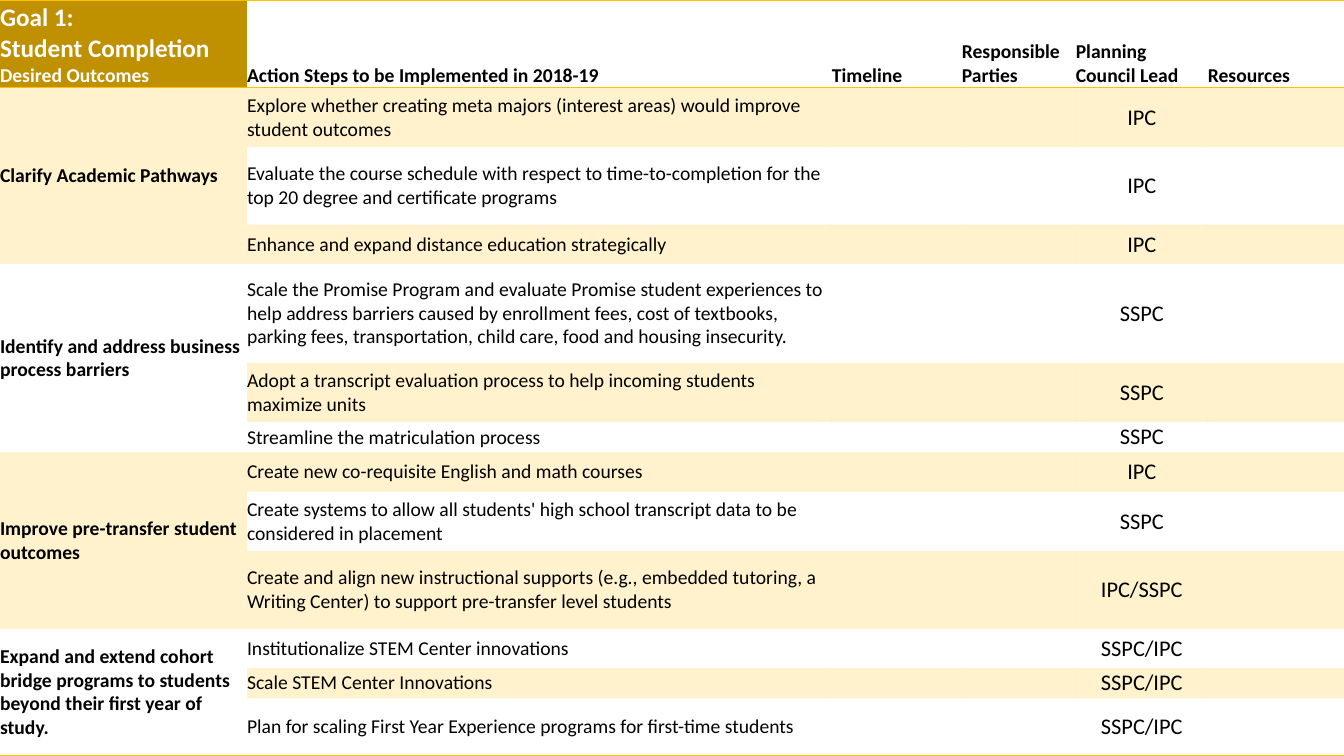
from lxml import etree
from pptx import Presentation
from pptx import util as u
from pptx.dml import color
from pptx.enum import text
from pptx.oxml import ns

COLORS = {"gold": "FFC000", "dark_gold": "BF9000", "white": "FFFFFF", "black": "000000"}
COLUMN_WIDTHS = [2.45, 5.8, 1.29, 1.13, 1.31, 1.35]
ROW_HEIGHTS = [0.87, 0.59, 0.77, 0.39, 0.98, 0.59, 0.3, 0.39, 0.59, 0.77, 0.39, 0.3, 0.57]
HEADINGS = ["Action Steps to be Implemented in 2018-19", "Timeline",
            "Responsible Parties", "Planning Council Lead", "Resources"]
OUTCOMES = [
    ("Clarify Academic Pathways", [
        ("Explore whether creating meta majors (interest areas) would improve student outcomes", "IPC"),
        ("Evaluate the course schedule with respect to time-to-completion for the "
         "top 20 degree and certificate programs", "IPC"),
        ("Enhance and expand distance education strategically", "IPC")]),
    ("Identify and address business process barriers", [
        ("Scale the Promise Program and evaluate Promise student experiences to help address "
         "barriers caused by enrollment fees, cost of textbooks, parking fees, transportation, "
         "child care, food and housing insecurity.", "SSPC"),
        ("Adopt a transcript evaluation process to help incoming students maximize units", "SSPC"),
        ("Streamline the matriculation process", "SSPC")]),
    ("Improve pre-transfer student outcomes", [
        ("Create new co-requisite English and math courses", "IPC"),
        ("Create systems to allow all students' high school transcript data to be "
         "considered in placement", "SSPC"),
        ("Create and align new instructional supports (e.g., embedded tutoring, a "
         "Writing Center) to support pre-transfer level students", "IPC/SSPC")]),
    ("Expand and extend cohort bridge programs to students beyond their first year of study.", [
        ("Institutionalize STEM Center innovations", "SSPC/IPC"),
        ("Scale STEM Center Innovations", "SSPC/IPC"),
        ("Plan for scaling First Year Experience programs for first-time students", "SSPC/IPC")]),
]


def write(cell, lines, bold=False, ink="black", align=text.PP_ALIGN.LEFT):
    for index, (words, size) in enumerate(lines):
        frame = cell.text_frame
        paragraph = frame.add_paragraph() if index else frame.paragraphs[0]
        paragraph.alignment = align
        run = paragraph.add_run()
        run.text = words
        run.font.name = "Calibri"
        run.font.size = u.Pt(size)
        run.font.bold = bold
        run.font.color.rgb = color.RGBColor.from_string(COLORS[ink])


def add_borders(cell, sides):
    properties = cell._tc.get_or_add_tcPr()
    for position, side in enumerate(sides):
        line = etree.Element(ns.qn("a:ln" + side), w=str(u.Pt(1)))
        fill = etree.SubElement(line, ns.qn("a:solidFill"))
        etree.SubElement(fill, ns.qn("a:srgbClr"), val=COLORS["gold"])
        properties.insert(position, line)


presentation = Presentation()
presentation.slide_width = u.Inches(13.33)
presentation.slide_height = u.Inches(7.5)
slide = presentation.slides.add_slide(presentation.slide_layouts[6])

frame = slide.shapes.add_table(len(ROW_HEIGHTS), len(COLUMN_WIDTHS), 0, 0,
                               u.Inches(13.33), u.Inches(7.5))
table = frame.table
table.first_row = False
table.horz_banding = False
style = table._tbl.tblPr.find(ns.qn("a:tableStyleId"))
style.text = "{2D5ABB26-0587-4C30-8999-92F81FD0307C}"
for column, width in zip(table.columns, COLUMN_WIDTHS):
    column.width = u.Inches(width)
for row, height in zip(table.rows, ROW_HEIGHTS):
    row.height = u.Inches(height)

for row_index, row in enumerate(table.rows):
    for cell in row.cells:
        cell.margin_left = cell.margin_right = cell.margin_top = cell.margin_bottom = 0
        cell.vertical_anchor = text.MSO_ANCHOR.MIDDLE if row_index else text.MSO_ANCHOR.BOTTOM
        if row_index % 2:
            cell.fill.solid()
            cell.fill.fore_color.rgb = color.RGBColor.from_string(COLORS["gold"])
            tint = cell._tc.tcPr.find(".//" + ns.qn("a:srgbClr"))
            etree.SubElement(tint, ns.qn("a:alpha"), val="20000")
        else:
            cell.fill.background()
        paragraph = cell.text_frame.paragraphs[0]
        etree.SubElement(paragraph._p, ns.qn("a:endParaRPr"), sz="1400")

goal = table.cell(0, 0)
goal.fill.solid()
goal.fill.fore_color.rgb = color.RGBColor.from_string(COLORS["dark_gold"])
write(goal, [("Goal 1:", 18), ("Student Completion", 18), ("Desired Outcomes", 14)],
      bold=True, ink="white")
for column_index, heading in enumerate(HEADINGS, 1):
    write(table.cell(0, column_index), [(heading, 14)], bold=True)

row_index = 1
for outcome, steps in OUTCOMES:
    outcome_cell = table.cell(row_index, 0)
    outcome_cell.merge(table.cell(row_index + len(steps) - 1, 0))
    write(outcome_cell, [(outcome, 14)], bold=True)
    for step, lead in steps:
        write(table.cell(row_index, 1), [(step, 14)])
        write(table.cell(row_index, 4), [(lead, 16)], align=text.PP_ALIGN.CENTER)
        row_index += 1

for cell in table.rows[0].cells:
    add_borders(cell, "TB")
for cell in [outcome_cell, *table.rows[len(ROW_HEIGHTS) - 1].cells]:
    add_borders(cell, "B")

presentation.save("out.pptx")
